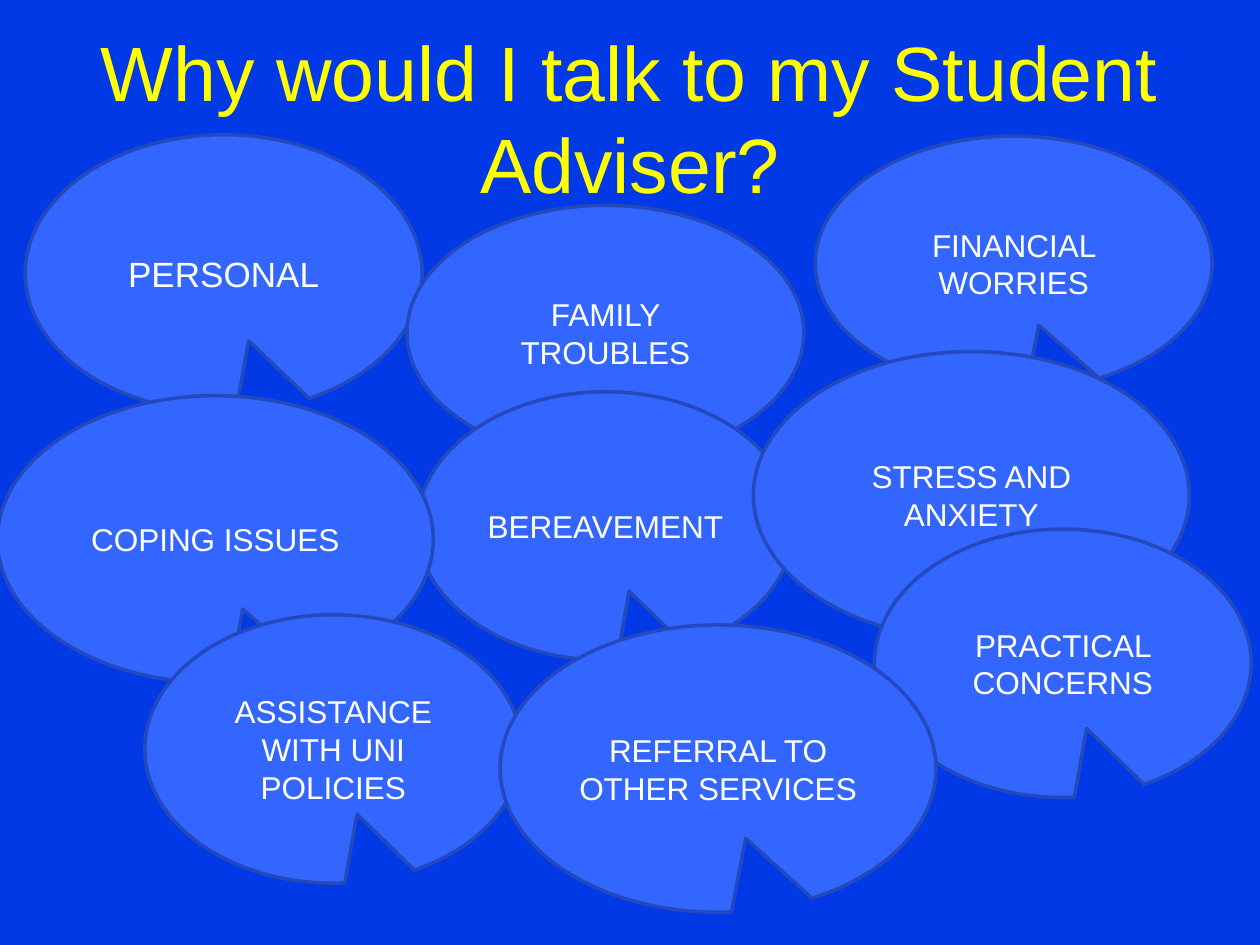
from pptx import Presentation
from pptx.dml.color import RGBColor
from pptx.enum.shapes import MSO_SHAPE
from pptx.enum.text import MSO_ANCHOR, PP_ALIGN
from pptx.util import Inches, Pt

CALLOUT = MSO_SHAPE.OVAL_CALLOUT
MIDDLE = MSO_ANCHOR.MIDDLE
CENTER = PP_ALIGN.CENTER

TITLE = "Why would I talk to my Student Adviser?"
BACKGROUND, YELLOW, WHITE = "0039E5", "FFFF00", "FFFFFF"
BUBBLE_FILL, BUBBLE_LINE = "3366FF", "2349BC"
TAIL = (0.063, 0.243)

SIZES = {
    "first": (3.15, 2.2),
    "wide": (3.15, 2.02),
    "small": (2.99, 2.13),
    "large": (3.46, 2.28),
}
REASONS = [
    ("PERSONAL", 0.2, 1.07, "first", 20),
    ("FINANCIAL WORRIES", 6.47, 1.08, "wide", 18),
    ("FAMILY TROUBLES", 3.23, 1.63, "wide", 18),
    ("BEREAVEMENT", 3.31, 3.11, "small", 18),
    ("STRESS AND ANXIETY", 5.98, 2.79, "large", 18),
    ("COPING ISSUES", -0.02, 3.14, "large", 18),
    ("PRACTICAL CONCERNS", 6.94, 4.2, "small", 18),
    ("ASSISTANCE WITH UNI POLICIES", 1.15, 4.88, "small", 18),
    ("REFERRAL TO OTHER SERVICES", 3.97, 4.96, "large", 18),
]


def rgb(color):
    return RGBColor.from_string(color)


def write(holder, text, size, color):
    frame = holder.text_frame
    frame.word_wrap = True
    frame.vertical_anchor = MIDDLE
    frame.text = text
    paragraph = frame.paragraphs[0]
    paragraph.alignment = CENTER
    font = paragraph.runs[0].font
    font.name = "Arial"
    font.size = Pt(size)
    font.color.rgb = rgb(color)


def add_bubble(slide, reason, left, top, size, points):
    width, height = SIZES[size]
    bubble = slide.shapes.add_shape(
        CALLOUT, Inches(left), Inches(top), Inches(width), Inches(height))
    for index, offset in enumerate(TAIL):
        bubble.adjustments[index] = offset
    bubble.shadow.inherit = False
    bubble.fill.solid()
    bubble.fill.fore_color.rgb = rgb(BUBBLE_FILL)
    bubble.line.color.rgb = rgb(BUBBLE_LINE)
    bubble.line.width = Pt(2)
    write(bubble, reason, points, WHITE)


def main():
    deck = Presentation()
    deck.slide_width, deck.slide_height = Inches(10), Inches(7.5)
    slide = deck.slides.add_slide(deck.slide_layouts[6])
    slide.background.fill.solid()
    slide.background.fill.fore_color.rgb = rgb(BACKGROUND)

    title = slide.shapes.add_textbox(
        Inches(0.5), Inches(0.3), Inches(9), Inches(1.25))
    write(title, TITLE, 44, YELLOW)
    for reason in REASONS:
        add_bubble(slide, *reason)

    deck.save("out.pptx")


if __name__ == "__main__":
    main()
